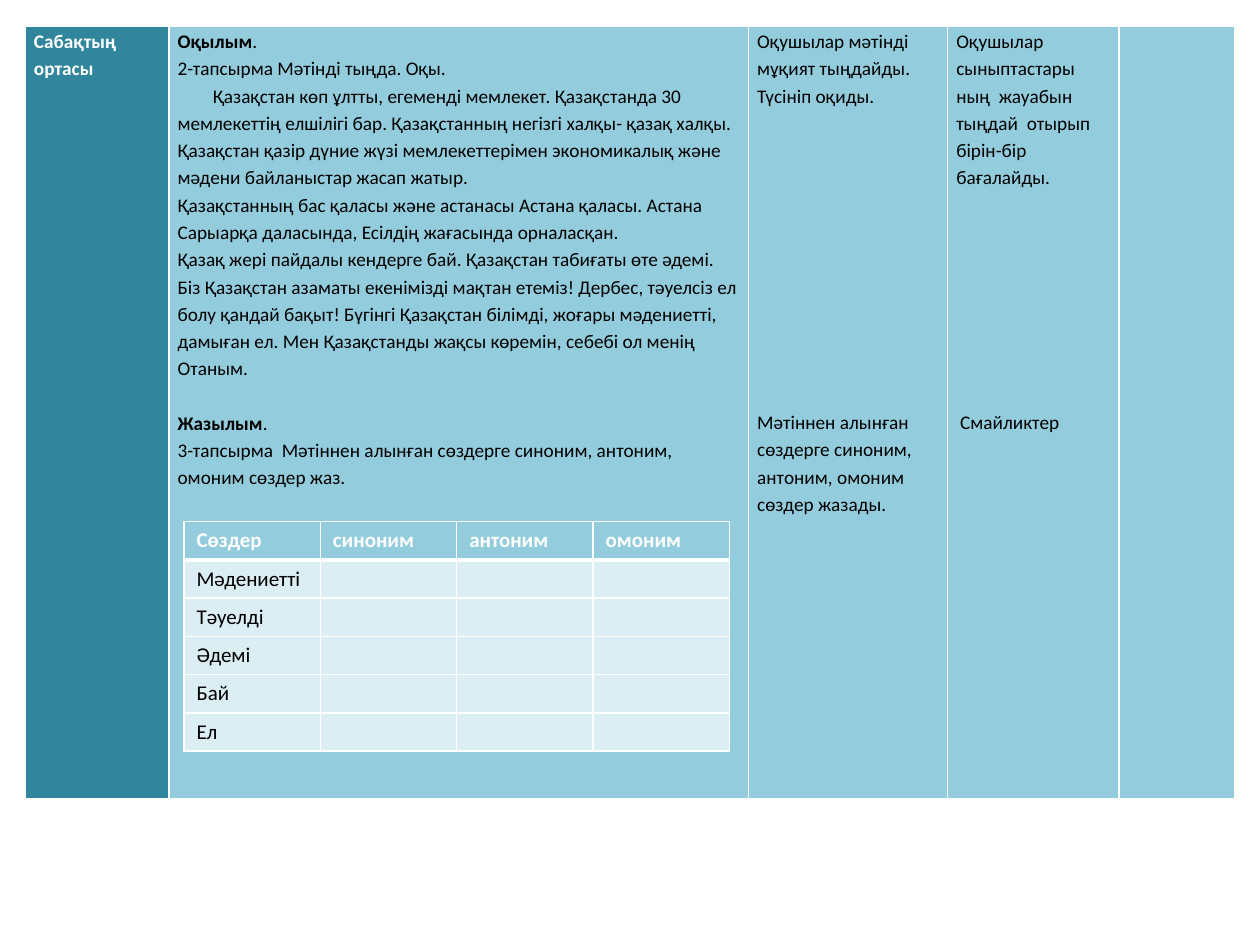
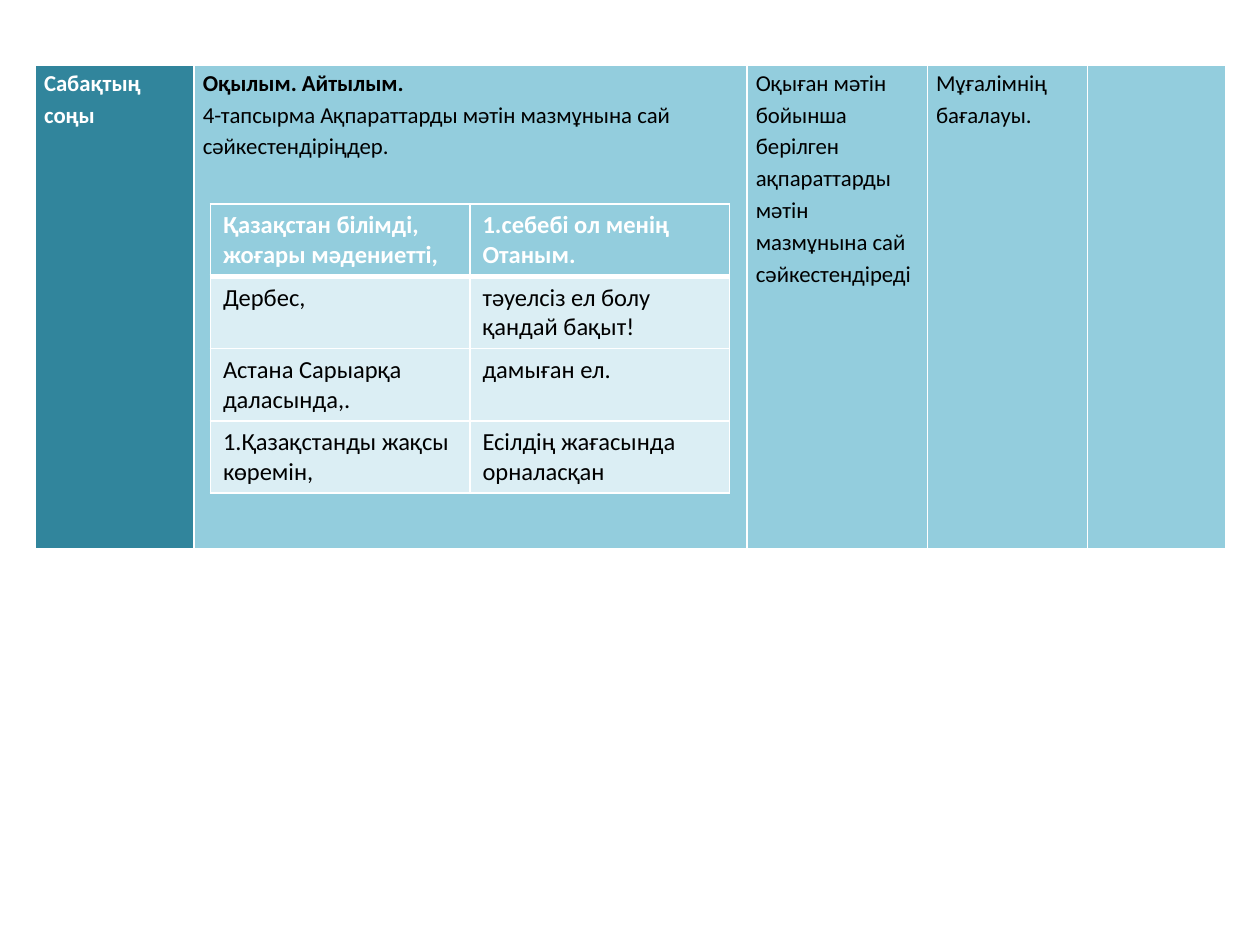
from dataclasses import dataclass
from lxml.etree import SubElement
from pptx import Presentation
from pptx.dml.color import RGBColor
from pptx.oxml.ns import qn
from pptx.util import Inches, Pt

FONT = "Calibri"
WHITE, BLACK = "FFFFFF", "000000"
STAGE_FILL, PLAN_FILL, WORD_FILL = "31859C", "93CDDD", "DBEEF4"
LINE_SPACING = 1.15
BLANK_LAYOUT = 6


@dataclass
class Line:
    text: str
    heading: str = ""
    gap: float = 0
    left: float = 0
    first: float = 0


LESSON_STAGES = [
    {
        "plan": {
            "at": (0.2, 0.21), "widths": [1.14, 4.6, 1.58, 1.36, 0.92], "height": 6.14, "size": 11,
            "cells": [
                [Line("", "Сабақтың ортасы")],
                [
                    Line(".", "Оқылым"),
                    Line("2-тапсырма Мәтінді тыңда. Оқы."),
                    Line("Қазақстан көп ұлтты, егеменді мемлекет. Қазақстанда 30 мемлекеттің "
                         "елшілігі бар. Қазақстанның негізгі халқы- қазақ халқы. Қазақстан қазір "
                         "дүние жүзі мемлекеттерімен экономикалық және мәдени байланыстар жасап "
                         "жатыр.", first=0.28),
                    Line("Қазақстанның бас қаласы және астанасы Астана қаласы. Астана Сарыарқа "
                         "даласында, Есілдің жағасында орналасқан."),
                    Line("Қазақ жері пайдалы кендерге бай. Қазақстан табиғаты өте әдемі. Біз "
                         "Қазақстан азаматы екенімізді мақтан етеміз! Дербес, тәуелсіз ел болу "
                         "қандай бақыт! Бүгінгі Қазақстан білімді, жоғары мәдениетті, дамыған ел. "
                         "Мен Қазақстанды жақсы көремін, себебі ол менің Отаным."),
                    Line(".", "Жазылым", gap=15.5),
                    Line("3-тапсырма  Мәтіннен алынған сөздерге синоним, антоним, омоним сөздер жаз."),
                ],
                [
                    Line("Оқушылар мәтінді мұқият тыңдайды."),
                    Line("Түсініп оқиды."),
                    Line("Мәтіннен алынған сөздерге синоним, антоним, омоним сөздер жазады.", gap=171),
                ],
                [
                    Line("Оқушылар сыныптастары"),
                    Line("ның  жауабын тыңдай  отырып бірін-бір бағалайды."),
                    Line("Смайликтер", gap=124, left=0.03),
                ],
                [],
            ],
        },
        "task": {
            "at": (1.46, 4.14), "width": 4.33, "row_height": 0.3, "size": 12,
            "rows": [
                ["Сөздер", "синоним", "антоним", "омоним"],
                ["Мәдениетті", "", "", ""],
                ["Тәуелді", "", "", ""],
                ["Әдемі", "", "", ""],
                ["Бай", "", "", ""],
                ["Ел", "", "", ""],
            ],
        },
    },
    {
        "plan": {
            "at": (0.28, 0.52), "widths": [1.26, 4.39, 1.43, 1.27, 1.1], "height": 3.85, "size": 13,
            "cells": [
                [Line("", "Сабақтың соңы")],
                [
                    Line("", "Оқылым. Айтылым."),
                    Line("4-тапсырма Ақпараттарды мәтін мазмұнына сай сәйкестендіріңдер."),
                ],
                [Line("Оқыған мәтін бойынша берілген ақпараттарды мәтін мазмұнына сай сәйкестендіреді")],
                [Line("Мұғалімнің бағалауы.")],
                [],
            ],
        },
        "task": {
            "at": (1.67, 1.62), "width": 4.12, "row_height": 0.57, "size": 14,
            "rows": [
                ["Қазақстан білімді, жоғары мәдениетті,", "1.себебі ол менің Отаным."],
                ["Дербес,", "тәуелсіз ел болу қандай бақыт!"],
                ["Астана Сарыарқа даласында,.", "дамыған ел."],
                ["1.Қазақстанды жақсы көремін,", "Есілдің жағасында орналасқан"],
            ],
        },
    },
]


def colour(value):
    return RGBColor.from_string(value)


def format_paragraph(paragraph, size, text_colour, bold=None):
    paragraph.font.name = FONT
    paragraph.font.size = Pt(size)
    paragraph.font.bold = bold
    paragraph.font.color.rgb = colour(text_colour)
    if not paragraph.runs:
        SubElement(paragraph._p, qn("a:endParaRPr"), sz=str(size * 100))


def format_cell(cell, fill, top=1, bottom=1):
    properties = cell._tc.get_or_add_tcPr()
    for side, width in (("lnL", 1), ("lnR", 1), ("lnT", top), ("lnB", bottom)):
        border = SubElement(properties, qn(f"a:{side}"), w=str(Pt(width)))
        border_fill = SubElement(border, qn("a:solidFill"))
        SubElement(border_fill, qn("a:srgbClr"), val=WHITE)
    cell.fill.solid()
    cell.fill.fore_color.rgb = colour(fill)


def add_grid(page, at, widths, heights):
    left, top = at
    frame = page.shapes.add_table(len(heights), len(widths), Inches(left), Inches(top),
                                  Inches(sum(widths)), Inches(sum(heights)))
    table = frame.table
    table.first_row = table.horz_banding = False
    for column, width in zip(table.columns, widths):
        column.width = Inches(width)
    for row, height in zip(table.rows, heights):
        row.height = Inches(height)
    return table


def write_line(paragraph, line, size, text_colour):
    if line.left or line.first:
        indents = paragraph._p.get_or_add_pPr()
        indents.set("marL", str(Inches(line.left)))
        indents.set("indent", str(Inches(line.first)))
    paragraph.line_spacing = LINE_SPACING
    if line.gap:
        paragraph.space_before = Pt(line.gap)
    for text, bold in ((line.heading, True), (line.text, False)):
        if text:
            span = paragraph.add_run()
            span.text = text
            span.font.bold = bold
    format_paragraph(paragraph, size, text_colour)


def add_plan(page, at, widths, height, size, cells):
    table = add_grid(page, at, widths, [height])
    for index, lines in enumerate(cells):
        cell = table.cell(0, index)
        format_cell(cell, PLAN_FILL if index else STAGE_FILL, bottom=3)
        cell.margin_left = cell.margin_right = Inches(0.07)
        cell.margin_top = cell.margin_bottom = 0
        for number, line in enumerate(lines):
            frame = cell.text_frame
            paragraph = frame.add_paragraph() if number else frame.paragraphs[0]
            write_line(paragraph, line, size, BLACK if index else WHITE)


def add_task(page, at, width, row_height, size, rows):
    count = len(rows[0])
    table = add_grid(page, at, [width / count] * count, [row_height] * len(rows))
    for row, texts in enumerate(rows):
        header = row == 0
        for column, text in enumerate(texts):
            cell = table.cell(row, column)
            format_cell(cell, PLAN_FILL if header else WORD_FILL,
                        top=3 if row == 1 else 1, bottom=3 if header else 1)
            if text:
                cell.text = text
            format_paragraph(cell.text_frame.paragraphs[0], size,
                             WHITE if header else BLACK, header)


def main():
    deck = Presentation()
    deck.slide_width, deck.slide_height = Inches(10), Inches(7.5)
    for stage in LESSON_STAGES:
        page = deck.slides.add_slide(deck.slide_layouts[BLANK_LAYOUT])
        add_plan(page, **stage["plan"])
        add_task(page, **stage["task"])
    deck.save("out.pptx")


if __name__ == "__main__":
    main()
